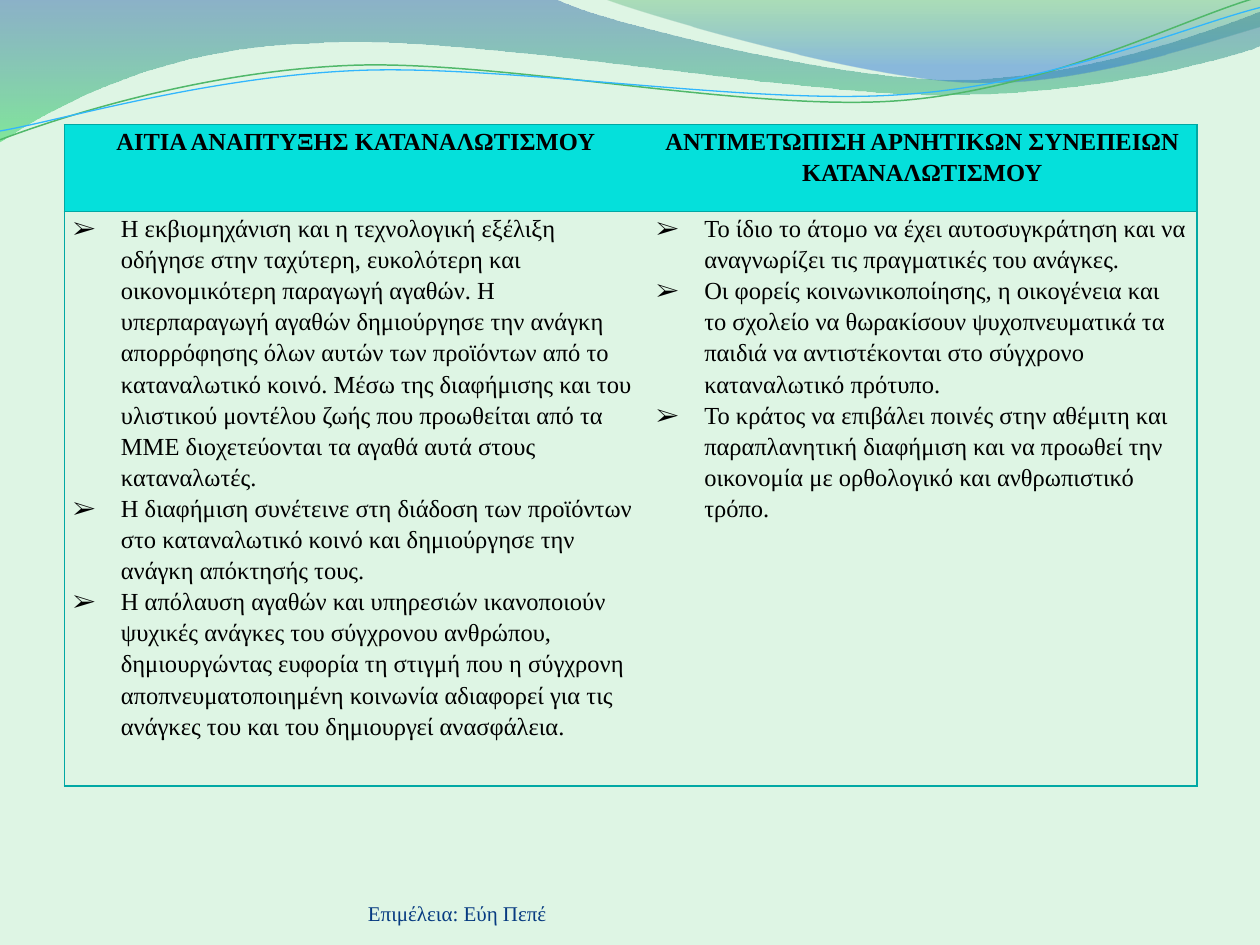
from dataclasses import dataclass

from lxml import etree
from pptx import Presentation
from pptx.dml.color import RGBColor
from pptx.enum.text import MSO_ANCHOR, PP_ALIGN
from pptx.oxml.ns import qn
from pptx.util import Emu, Pt

EMU_PER_PX = 9144
CENTER, LEFT = PP_ALIGN.CENTER, PP_ALIGN.LEFT
BOTTOM, TOP = MSO_ANCHOR.BOTTOM, MSO_ANCHOR.TOP
FONT = "Times New Roman"
PAPER, TURQUOISE, TEAL, BLACK, NAVY = "DEF5E4", "05E0DB", "01A8A4", "000000", "073B81"
INDENT = 38

Point = tuple[int, int]


@dataclass(frozen=True)
class Stop:
    position: float
    color: str
    opacity: int


@dataclass(frozen=True)
class Wave:
    start: Point
    segments: tuple[tuple[Point, ...], ...]
    stops: tuple[Stop, ...] = ()
    line_color: str = ""
    line_width: float = 0


@dataclass(frozen=True)
class Column:
    width: int
    heading: str
    points: tuple[str, ...]
    outer_side: str


WAVES = (
    Wave(
        (0, 0),
        (
            ((440, -1),),
            ((476, 17), (664, 63), (758, 63)),
            ((853, 63), (958, 26), (1000, 9)),
            ((1001, 36),),
            ((983, 44), (870, 76), (746, 75)),
            ((622, 75), (382, 28), (257, 34)),
            ((129, 36), (46, 83), (-1, 113)),
        ),
        stops=(Stop(0, "2960A7", 45), Stop(1, "35DA5E", 55)),
    ),
    Wave(
        (479, -1),
        (
            ((509, 11), (682, 62), (769, 65)),
            ((856, 69), (961, 32), (1000, 21)),
            ((1000, 0),),
        ),
        stops=(Stop(0, "36A752", 30), Stop(0.8, "2472D3", 45)),
    ),
    Wave(
        (0, 111),
        (
            ((48, 93), (158, 57), (277, 52)),
            ((395, 47), (593, 89), (713, 80)),
            ((833, 71), (938, 15), (998, -2)),
        ),
        line_color="50B86A",
        line_width=0.85,
    ),
    Wave(
        (0, 104),
        (
            ((47, 96), (164, 61), (283, 56)),
            ((403, 51), (597, 84), (717, 75)),
            ((836, 67), (941, 21), (1000, 6)),
        ),
        line_color="31B6FD",
        line_width=0.75,
    ),
)

COLUMNS = (
    Column(
        463,
        "ΑΙΤΙΑ ΑΝΑΠΤΥΞΗΣ ΚΑΤΑΝΑΛΩΤΙΣΜΟΥ",
        (
            "Η εκβιομηχάνιση και η τεχνολογική εξέλιξη οδήγησε στην ταχύτερη, ευκολότερη και "
            "οικονομικότερη παραγωγή αγαθών. Η υπερπαραγωγή αγαθών δημιούργησε την ανάγκη "
            "απορρόφησης όλων αυτών των προϊόντων από το καταναλωτικό κοινό. Μέσω της διαφήμισης "
            "και του υλιστικού μοντέλου ζωής που προωθείται από τα ΜΜΕ διοχετεύονται τα αγαθά "
            "αυτά στους καταναλωτές.",
            "Η διαφήμιση συνέτεινε στη διάδοση των προϊόντων στο καταναλωτικό κοινό και "
            "δημιούργησε την ανάγκη απόκτησής τους.",
            "Η απόλαυση αγαθών και υπηρεσιών ικανοποιούν ψυχικές ανάγκες του σύγχρονου ανθρώπου, "
            "δημιουργώντας ευφορία τη στιγμή που η σύγχρονη αποπνευματοποιημένη κοινωνία "
            "αδιαφορεί για τις ανάγκες του και του δημιουργεί ανασφάλεια.",
        ),
        "L",
    ),
    Column(
        436,
        "ΑΝΤΙΜΕΤΩΠΙΣΗ ΑΡΝΗΤΙΚΩΝ ΣΥΝΕΠΕΙΩΝ ΚΑΤΑΝΑΛΩΤΙΣΜΟΥ",
        (
            "Το ίδιο το άτομο να έχει αυτοσυγκράτηση και να αναγνωρίζει τις πραγματικές του ανάγκες.",
            "Οι φορείς κοινωνικοποίησης, η οικογένεια και το σχολείο να θωρακίσουν ψυχοπνευματικά "
            "τα παιδιά να αντιστέκονται στο σύγχρονο καταναλωτικό πρότυπο.",
            "Το κράτος να επιβάλει ποινές στην αθέμιτη και παραπλανητική διαφήμιση και να "
            "προωθεί την οικονομία με ορθολογικό και ανθρωπιστικό τρόπο.",
        ),
        "R",
    ),
)
ROW_HEIGHTS = (69, 425)


def px(length: int) -> Emu:
    return Emu(length * EMU_PER_PX)


def rgb(color: str) -> RGBColor:
    return RGBColor.from_string(color)


def bend_segments(ribbon, wave: Wave) -> None:
    straight_lines = list(ribbon.element.spPr.iter(qn("a:lnTo")))
    for straight, segment in zip(straight_lines, wave.segments):
        if len(segment) == 1:
            continue
        curve = etree.Element(qn("a:cubicBezTo"))
        for x, y in segment:
            etree.SubElement(
                curve, qn("a:pt"), x=str(px(x) - ribbon.left), y=str(px(y) - ribbon.top)
            )
        straight.getparent().replace(straight, curve)


def draw_wave(slide, wave: Wave) -> None:
    start_x, start_y = wave.start
    builder = slide.shapes.build_freeform(px(start_x), px(start_y))
    ends = [(px(x), px(y)) for *_, (x, y) in wave.segments]
    builder.add_line_segments(ends, close=bool(wave.stops))
    ribbon = builder.convert_to_shape()
    bend_segments(ribbon, wave)
    ribbon.shadow.inherit = False
    if not wave.stops:
        ribbon.fill.background()
        ribbon.line.color.rgb = rgb(wave.line_color)
        ribbon.line.width = Pt(wave.line_width)
        return
    ribbon.line.fill.background()
    ribbon.fill.gradient()
    ribbon.fill.gradient_angle = 270
    for gradient_stop, stop in zip(ribbon.fill.gradient_stops, wave.stops):
        gradient_stop.position = stop.position
        gradient_stop.color.rgb = rgb(stop.color)
    for tint, stop in zip(ribbon.element.spPr.iter(qn("a:srgbClr")), wave.stops):
        etree.SubElement(tint, qn("a:alpha"), val=str(stop.opacity * 1000))


def style_font(font, size: int, color: str, bold: bool = False) -> None:
    font.name = FONT
    font.size = Pt(size)
    font.bold = bold
    font.color.rgb = rgb(color)


def set_bullet(paragraph) -> None:
    properties = paragraph._p.get_or_add_pPr()
    properties.set("marL", str(px(INDENT)))
    properties.set("indent", str(px(-INDENT)))
    etree.SubElement(properties, qn("a:buFont"), typeface=FONT)
    etree.SubElement(properties, qn("a:buChar"), char="➢")


def set_borders(cell, visible_sides: str) -> None:
    properties = cell._tc.get_or_add_tcPr()
    for index, side in enumerate("LRTB"):
        border = etree.Element(qn(f"a:ln{side}"), w=str(Pt(0.75)))
        if side in visible_sides:
            paint = etree.SubElement(border, qn("a:solidFill"))
            etree.SubElement(paint, qn("a:srgbClr"), val=TEAL)
        else:
            etree.SubElement(border, qn("a:noFill"))
        properties.insert(index, border)


def fill_cell(cell, texts: tuple[str, ...], is_heading: bool, sides: str) -> None:
    cell.margin_left = cell.margin_right = px(7)
    cell.margin_top = cell.margin_bottom = 0
    cell.vertical_anchor = TOP
    if is_heading:
        cell.fill.solid()
        cell.fill.fore_color.rgb = rgb(TURQUOISE)
    else:
        cell.fill.background()
    set_borders(cell, sides)
    cell.text_frame.text = "\n".join(texts)
    for paragraph in cell.text_frame.paragraphs:
        paragraph.alignment = CENTER if is_heading else LEFT
        paragraph.line_spacing = 1.15
        if not is_heading:
            set_bullet(paragraph)
        style_font(paragraph.runs[0].font, 14, BLACK, is_heading)


def draw_table(slide, left: int, top: int) -> None:
    width = sum(column.width for column in COLUMNS)
    frame = slide.shapes.add_table(
        len(ROW_HEIGHTS), len(COLUMNS), px(left), px(top), px(width), px(sum(ROW_HEIGHTS))
    )
    table = frame.table
    table.horz_banding = False
    for row, height in zip(table.rows, ROW_HEIGHTS):
        row.height = px(height)
    for index, column in enumerate(COLUMNS):
        table.columns[index].width = px(column.width)
        sides = "TB" + column.outer_side
        fill_cell(table.cell(0, index), (column.heading,), True, sides)
        fill_cell(table.cell(1, index), column.points, False, sides)


def draw_credit(slide) -> None:
    frame = slide.shapes.add_textbox(px(292), px(695), px(367), px(40)).text_frame
    frame.word_wrap = True
    frame.vertical_anchor = BOTTOM
    frame.margin_left = frame.margin_right = frame.margin_top = frame.margin_bottom = 0
    frame.text = "Επιμέλεια: Εύη Πεπέ"
    style_font(frame.paragraphs[0].font, 12, NAVY)


def main() -> None:
    presentation = Presentation()
    presentation.slide_width, presentation.slide_height = px(1000), px(750)
    slide = presentation.slides.add_slide(presentation.slide_layouts[6])
    slide.background.fill.solid()
    slide.background.fill.fore_color.rgb = rgb(PAPER)
    for wave in WAVES:
        draw_wave(slide, wave)
    draw_credit(slide)
    draw_table(slide, 51, 99)
    presentation.save("out.pptx")


if __name__ == "__main__":
    main()
